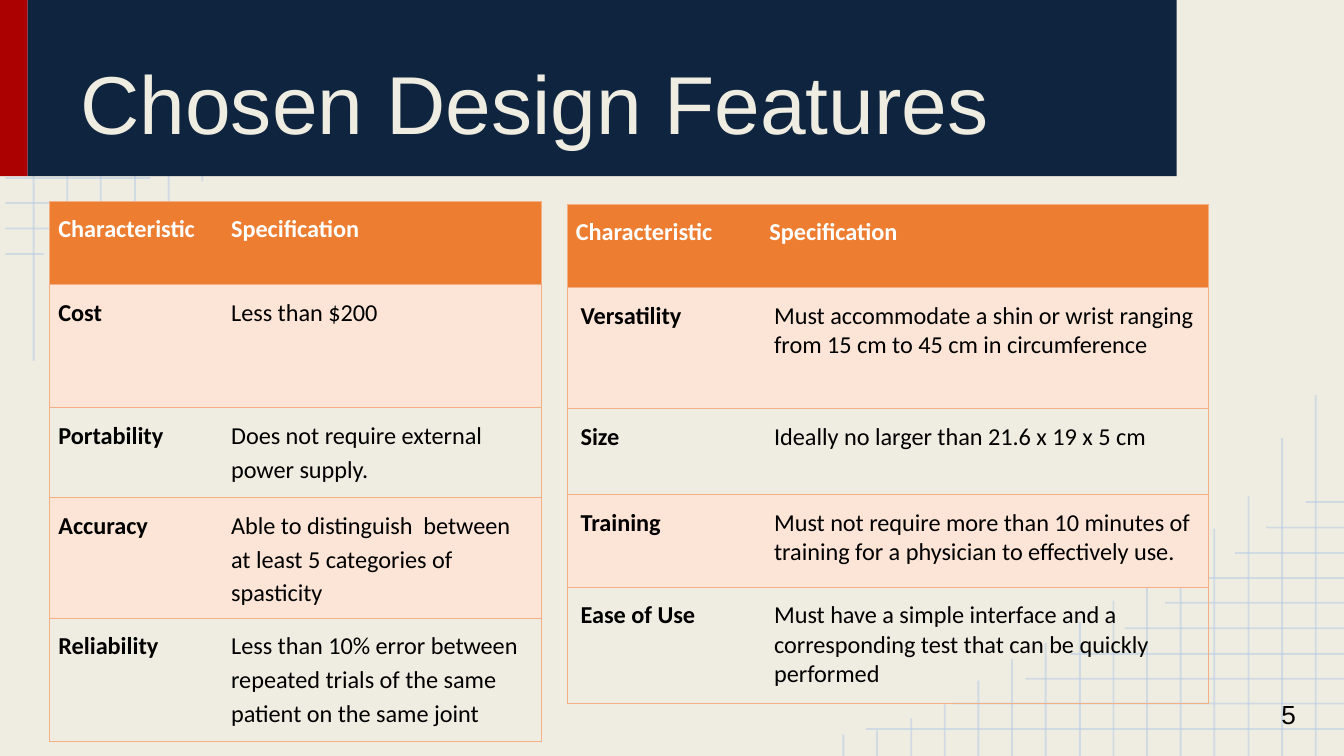
from dataclasses import dataclass

from lxml.etree import SubElement
from pptx import Presentation
from pptx.dml.color import RGBColor
from pptx.enum.shapes import MSO_CONNECTOR as Conn, MSO_SHAPE as Kind
from pptx.enum.text import MSO_ANCHOR as Anchor, PP_ALIGN as Align
from pptx.oxml.ns import qn
from pptx.util import Emu, Pt

SCALE = 4572  # EMU per px, 200 px to the inch
WIDE, HIGH = 2000, 1125
CREAM, NAVY, RED = "EFEDE2", "0F243E", "AB0101"
GRID, EDGE, HEAD, BAND = "B7CCE4", "F4B084", "ED7D31", "FCE4D6"
BLACK, WHITE = "000000", "FFFFFF"

# Grid line lengths, counted from the corner outwards
ROWS = (711, 583, 474, 407, 326, 266, 216, 162, 116, 57)
COLS = (537, 473, 387, 338, 301, 270, 231, 200, 168, 144, 112, 77, 56, 38, 32)
ROW_GAP, COL_GAP = 37.5, 50.2
BAR = 262


@dataclass
class Box:
    x: int
    y: int
    w: int
    h: int


@dataclass
class Grid:
    x: int
    y: int
    cols: tuple[int, ...]
    rows: tuple[int, ...]
    pad: int
    space: float
    body: tuple[tuple[str, str], ...]


GRIDS = (
    Grid(74, 300, (257, 475), (124, 183, 134, 179, 184), 13, 1.15, (
        ("Cost", "Less than $200"),
        ("Portability", "Does not require external power supply."),
        ("Accuracy", "Able to distinguish  between at least 5 categories of spasticity"),
        ("Reliability", "Less than 10% error between repeated trials of the same "
                        "patient on the same joint"),
    )),
    Grid(844, 304, (288, 666), (124, 180, 128, 138, 173), 20, 1.0, (
        ("Versatility", "Must accommodate a shin or wrist ranging from 15 cm to 45 cm "
                        "in circumference"),
        ("Size", "Ideally no larger than 21.6 x 19 x 5 cm"),
        ("Training", "Must not require more than 10 minutes of training for a "
                     "physician to effectively use."),
        ("Ease of Use", "Must have a simple interface and a corresponding test that "
                        "can be quickly performed"),
    )),
)


def px(n: int) -> Emu:
    return Emu(n * SCALE)


def rgb(code: str) -> RGBColor:
    return RGBColor.from_string(code)


def add_run(para, text: str, size: int, font: str, color: str, bold: bool = False) -> None:
    run = para.add_run()
    run.text = text
    run.font.size, run.font.name, run.font.bold = Pt(size), font, bold
    run.font.color.rgb = rgb(color)


def add_line(slide, x1: int, y1: int, x2: int, y2: int) -> None:
    line = slide.shapes.add_connector(Conn.STRAIGHT, px(x1), px(y1), px(x2), px(y2))
    line.line.color.rgb = rgb(GRID)
    line.line.width = Pt(1)
    props = line._element.spPr
    tint = props.find(".//" + qn("a:srgbClr"))
    SubElement(tint, qn("a:alpha")).set("val", "54000")
    SubElement(props, qn("a:effectLst"))


def add_mesh(slide) -> None:
    """Draw the grid in both corners, leaving out lines the title bar covers."""
    for i, size in enumerate(ROWS):
        y = round(40 + i * ROW_GAP)
        if y > BAR:
            add_line(slide, 8, y, 8 + size, y)
        y = HIGH - y
        add_line(slide, WIDE, y, WIDE - size, y)
    for i, size in enumerate(COLS):
        x = round(50 + i * COL_GAP)
        if size > BAR:
            add_line(slide, x, size, x, 0)
        x = round(1958 - i * COL_GAP)
        add_line(slide, x, HIGH - size, x, HIGH)


def add_bar(slide, box: Box, color: str) -> None:
    bar = slide.shapes.add_shape(Kind.RECTANGLE, px(box.x), px(box.y), px(box.w), px(box.h))
    bar.shadow.inherit = False
    bar.fill.solid()
    bar.fill.fore_color.rgb = rgb(color)
    bar.line.fill.background()


def add_text(slide, box: Box, text: str, size: int, color: str, anchor, align) -> None:
    frame = slide.shapes.add_textbox(px(box.x), px(box.y), px(box.w), px(box.h)).text_frame
    frame.word_wrap = True
    frame.vertical_anchor = anchor
    frame.margin_left = frame.margin_right = px(20)
    frame.margin_top = frame.margin_bottom = px(20)
    para = frame.paragraphs[0]
    para.alignment = align
    add_run(para, text, size, "Arial", color)


def set_edges(cell, inner: str) -> None:
    """Rule three sides of a cell and leave the inner side bare."""
    props = cell._tc.get_or_add_tcPr()
    for i, side in enumerate(("lnL", "lnR", "lnT", "lnB")):
        edge = props.makeelement(qn("a:" + side), {"w": str(Pt(0.5))})
        if side == inner:
            SubElement(edge, qn("a:noFill"))
        else:
            fill = SubElement(edge, qn("a:solidFill"))
            SubElement(fill, qn("a:srgbClr")).set("val", EDGE)
        props.insert(i, edge)


def fill_cell(cell, text: str, pad: int, space: float, color: str, bold: bool, back: str | None) -> None:
    cell.margin_left = cell.margin_right = px(pad)
    cell.margin_top = cell.margin_bottom = px(pad)
    if back:
        cell.fill.solid()
        cell.fill.fore_color.rgb = rgb(back)
    else:
        cell.fill.background()
    para = cell.text_frame.paragraphs[0]
    para.line_spacing = space
    add_run(para, text, 13, "Calibri", color, bold)


def add_grid(slide, grid: Grid) -> None:
    table = slide.shapes.add_table(
        len(grid.rows), len(grid.cols), px(grid.x), px(grid.y),
        px(sum(grid.cols)), px(sum(grid.rows))).table
    for col, wide in zip(table.columns, grid.cols):
        col.width = px(wide)
    for row, high in zip(table.rows, grid.rows):
        row.height = px(high)
    texts = (("Characteristic", "Specification"), *grid.body)
    for r, pair in enumerate(texts):
        for c, text in enumerate(pair):
            cell = table.cell(r, c)
            if r == 0:
                fill_cell(cell, text, 13, 1.15, WHITE, True, HEAD)
            else:
                back = BAND if r % 2 else None
                fill_cell(cell, text, grid.pad, grid.space, BLACK, c == 0, back)
            set_edges(cell, "lnL" if c else "lnR")


def main() -> None:
    deck = Presentation()
    deck.slide_width, deck.slide_height = px(WIDE), px(HIGH)
    slide = deck.slides.add_slide(deck.slide_layouts[6])
    slide.background.fill.solid()
    slide.background.fill.fore_color.rgb = rgb(CREAM)

    add_mesh(slide)
    add_bar(slide, Box(0, -2, 41, 264), RED)
    add_bar(slide, Box(41, -2, 1710, 264), NAVY)
    add_text(slide, Box(100, 22, 1600, 222), "Chosen Design Features", 44, CREAM,
             Anchor.BOTTOM, Align.LEFT)
    add_grid(slide, GRIDS[0])
    add_text(slide, Box(1786, 1020, 162, 86), "5", 14, BLACK, Anchor.TOP, Align.RIGHT)
    add_grid(slide, GRIDS[1])
    deck.save("out.pptx")


if __name__ == "__main__":
    main()
